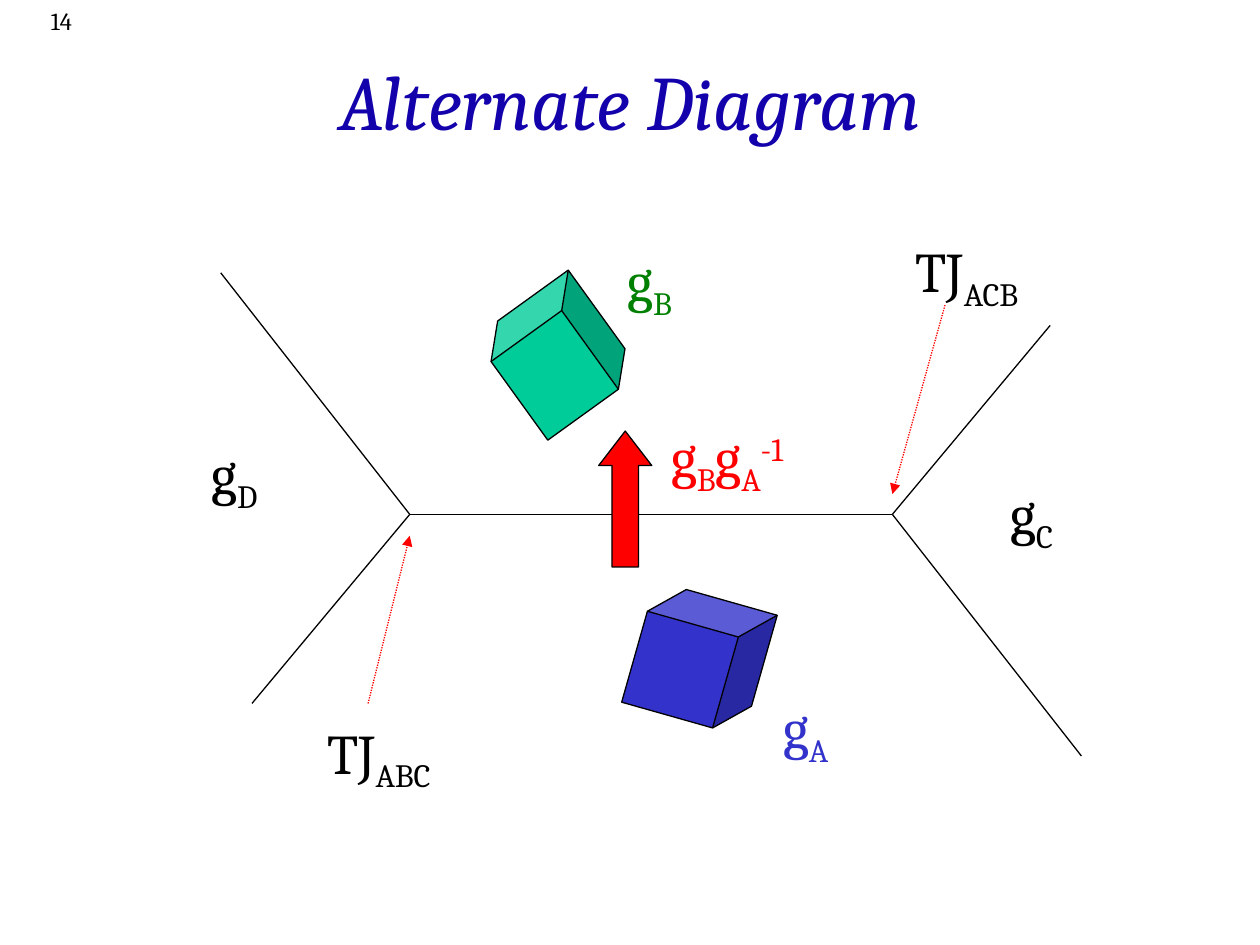
from dataclasses import dataclass

import pptx
import pptx.dml.color
import pptx.enum.dml
import pptx.enum.shapes
import pptx.enum.text
import pptx.oxml.ns
import pptx.util
from lxml import etree
from pptx.util import Cm

RGBColor = pptx.dml.color.RGBColor
Shapes = pptx.enum.shapes.MSO_SHAPE
Align = pptx.enum.text.PP_ALIGN
Anchor = pptx.enum.text.MSO_ANCHOR
qn = pptx.oxml.ns.qn

BLACK = RGBColor(0x00, 0x00, 0x00)
RED = RGBColor(0xFF, 0x00, 0x00)
NAVY = RGBColor(0x13, 0x01, 0xAB)
BLUE = RGBColor(0x33, 0x33, 0xCC)
TEAL = RGBColor(0x00, 0xCC, 0x99)
GREEN = RGBColor(0x00, 0x80, 0x00)

FONT = "Cambria"
LINE_WIDTH = pptx.util.Pt(0.75)
LABEL_HEIGHT = 1.6
SUBSCRIPT, SUPERSCRIPT = -25, 30

Point = tuple[float, float]
Piece = tuple[str, int]


@dataclass(frozen=True)
class Text:
    """Text box in centimetres; each piece pairs wording with a baseline shift."""
    left: float
    top: float
    width: float
    pieces: tuple[Piece, ...]
    color: RGBColor = BLACK
    height: float = LABEL_HEIGHT
    size: int = 32
    italic: bool = False
    align: Align = Align.LEFT
    anchor: Anchor = Anchor.TOP
    wrap: bool = False


@dataclass(frozen=True)
class Solid:
    kind: Shapes
    left: float
    top: float
    width: float
    height: float
    color: RGBColor
    adjustments: tuple[float, ...]
    rotation: float = 0


def subscripted(base: str, index: str) -> tuple[Piece, ...]:
    return (base, 0), (index, SUBSCRIPT)


HEADINGS = (
    Text(0, 0, 1.7, (("14", 0),), height=0.84, size=14, align=Align.RIGHT, wrap=True),
    Text(1.91, 0.43, 21.59, (("Alternate Diagram", 0),), NAVY, 3.18, 44, True,
         Align.CENTER, Anchor.MIDDLE, True),
)

LEFT_JUNCTION: Point = (8.26, 10.37)
RIGHT_JUNCTION: Point = (17.99, 10.37)
BOUNDARIES: tuple[tuple[Point, Point], ...] = (
    (LEFT_JUNCTION, RIGHT_JUNCTION),
    (RIGHT_JUNCTION, (21.17, 6.56)),
    ((5.08, 14.18), LEFT_JUNCTION),
    (LEFT_JUNCTION, (4.45, 5.5)),
    ((21.8, 15.24), RIGHT_JUNCTION),
)
POINTERS: tuple[tuple[Point, Point], ...] = (
    ((7.42, 14.18), (8.26, 10.8)),
    ((19.05, 6.15), (17.99, 9.96)),
)

SOLIDS = (
    Solid(Shapes.CUBE, 10.08, 5.89, 2.34, 2.54, TEAL, (0.25,), 324.2),
    Solid(Shapes.CUBE, 12.83, 12.01, 2.54, 2.54, BLUE, (0.25,), 15.8),
    Solid(Shapes.UP_ARROW, 12.07, 8.69, 1.07, 2.74, RED, (0.5, 0.65)),
)

LABELS = (
    Text(15.54, 13.84, 1.6, subscripted("g", "A"), BLUE),
    Text(12.4, 4.83, 1.6, subscripted("g", "B"), GREEN),
    Text(20.12, 9.53, 1.6, subscripted("g", "C")),
    Text(4.01, 8.71, 1.6, subscripted("g", "D")),
    Text(6.35, 14.35, 3.15, subscripted("TJ", "ABC")),
    Text(18.21, 4.65, 3.15, subscripted("TJ", "ACB")),
    Text(13.28, 8.38, 3.28,
         subscripted("g", "B") + subscripted("g", "A") + (("-1", SUPERSCRIPT),), RED),
)


def add_text(slide: pptx.slide.Slide, text: Text) -> None:
    shape = slide.shapes.add_textbox(
        Cm(text.left), Cm(text.top), Cm(text.width), Cm(text.height))
    frame = shape.text_frame
    frame.word_wrap = text.wrap
    frame.vertical_anchor = text.anchor
    paragraph = frame.paragraphs[0]
    paragraph.alignment = text.align
    font_format = {"name": FONT, "size": pptx.util.Pt(text.size), "italic": text.italic}
    for wording, baseline in text.pieces:
        run = paragraph.add_run()
        run.text = wording
        for name, value in font_format.items():
            setattr(run.font, name, value)
        run.font.color.rgb = text.color
        if baseline:
            run._r.get_or_add_rPr().set("baseline", str(baseline * 1000))


def add_line(slide: pptx.slide.Slide, start: Point, end: Point,
             color: RGBColor = BLACK, pointer: bool = False) -> None:
    """Draw a straight line; a pointer is dotted with an arrowhead at its end."""
    connector = slide.shapes.add_connector(
        pptx.enum.shapes.MSO_CONNECTOR.STRAIGHT, *map(Cm, start + end))
    connector.line.width = LINE_WIDTH
    connector.line.color.rgb = color
    if pointer:
        connector.line.dash_style = pptx.enum.dml.MSO_LINE.ROUND_DOT
        outline = connector.line._get_or_add_ln()
        etree.SubElement(outline, qn("a:tailEnd"), type="triangle")
    etree.SubElement(connector._element.spPr, qn("a:effectLst"))


def add_solid(slide: pptx.slide.Slide, solid: Solid) -> None:
    shape = slide.shapes.add_shape(
        solid.kind, Cm(solid.left), Cm(solid.top), Cm(solid.width), Cm(solid.height))
    for index, value in enumerate(solid.adjustments):
        shape.adjustments[index] = value
    shape.rotation = solid.rotation
    shape.shadow.inherit = False
    shape.fill.solid()
    shape.fill.fore_color.rgb = solid.color
    shape.line.color.rgb = BLACK
    shape.line.width = LINE_WIDTH


def main() -> None:
    presentation = pptx.Presentation()
    presentation.slide_width = Cm(25.4)
    presentation.slide_height = Cm(19.05)
    slide = presentation.slides.add_slide(presentation.slide_layouts[6])
    for heading in HEADINGS:
        add_text(slide, heading)
    for start, end in BOUNDARIES:
        add_line(slide, start, end)
    for start, end in POINTERS:
        add_line(slide, start, end, RED, pointer=True)
    for solid in SOLIDS:
        add_solid(slide, solid)
    for label in LABELS:
        add_text(slide, label)
    presentation.save("out.pptx")


if __name__ == "__main__":
    main()
